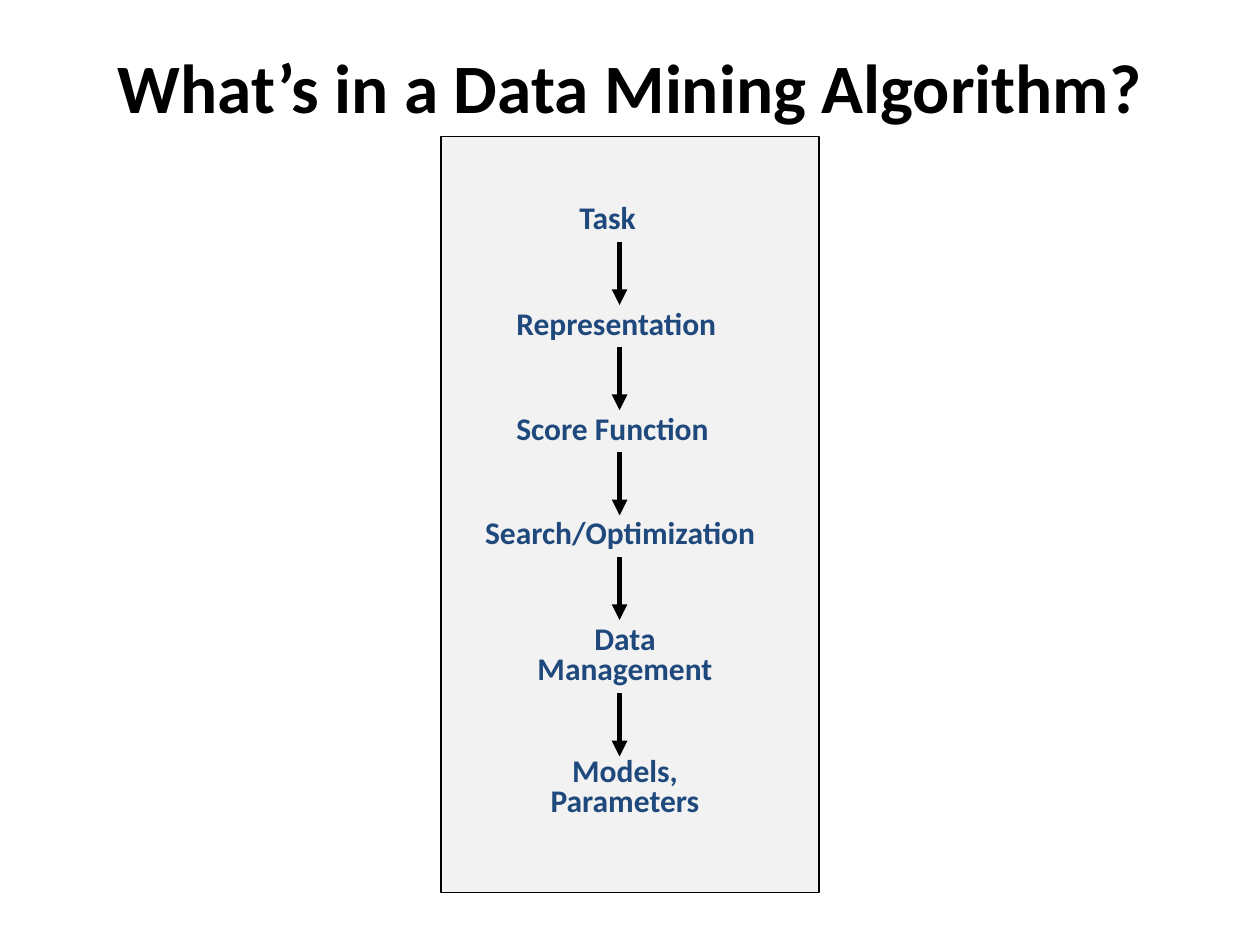
from dataclasses import dataclass

from lxml.etree import SubElement
from pptx import Presentation
from pptx.dml.color import RGBColor
from pptx.enum.shapes import MSO_CONNECTOR, MSO_SHAPE
from pptx.enum.text import MSO_ANCHOR, PP_ALIGN
from pptx.oxml.ns import qn
from pptx.util import Cm, Pt


@dataclass(frozen=True)
class Theme:
    """Colours, font and type sizes of the deck."""
    font: str = "Calibri"
    ink: RGBColor = RGBColor(0x00, 0x00, 0x00)
    label: RGBColor = RGBColor(0x1F, 0x49, 0x7D)
    panel: RGBColor = RGBColor(0xF2, 0xF2, 0xF2)
    title_size: float = 39.6
    label_size: float = 18


THEME = Theme()
ONE_LINE, TWO_LINES = 0.86, 1.5
ARROW_X, ARROW_LENGTH = 3.6, 1.27

STEPS = [
    ("Task", 2.54, 1.27, 2.97, ONE_LINE, PP_ALIGN.LEFT),
    ("Representation", 1.27, 3.39, 5.28, ONE_LINE, PP_ALIGN.LEFT),
    ("Score Function", 1.27, 5.51, 5.28, ONE_LINE, PP_ALIGN.LEFT),
    ("Search/Optimization", 0.64, 7.62, 7.2, ONE_LINE, PP_ALIGN.LEFT),
    ("Data Management", 1.07, 9.73, 5.28, TWO_LINES, PP_ALIGN.CENTER),
    ("Models, Parameters", 1.07, 12.4, 5.28, TWO_LINES, PP_ALIGN.CENTER),
]


def add_text(s, text, box, size, color, align, anchor, spacing=1.0):
    """Place one bold paragraph in a box given in centimetres."""
    tf = s.shapes.add_textbox(*map(Cm, box)).text_frame
    tf.word_wrap = True
    tf.vertical_anchor = anchor
    p = tf.paragraphs[0]
    p.text = text
    p.alignment = align
    p.line_spacing = spacing
    p.font.name = THEME.font
    p.font.size = Pt(size)
    p.font.bold = True
    p.font.color.rgb = color


def add_arrow(s, x, top, length):
    """Draw a downward arrow from the given point."""
    arrow = s.shapes.add_connector(
        MSO_CONNECTOR.STRAIGHT, Cm(x), Cm(top), Cm(x), Cm(top + length))
    arrow.line.color.rgb = THEME.ink
    arrow.line.width = Pt(3)
    SubElement(arrow.line._get_or_add_ln(), qn("a:tailEnd"), type="triangle")
    SubElement(arrow._element.spPr, qn("a:effectLst"))


def add_title(s, box):
    """Place the slide title."""
    add_text(s, "What’s in a Data Mining Algorithm?", box, THEME.title_size,
             THEME.ink, PP_ALIGN.CENTER, MSO_ANCHOR.TOP)


def add_flow(s, box):
    """Draw the panel with its steps and the arrows between them."""
    left, top = box[:2]
    panel = s.shapes.add_shape(MSO_SHAPE.RECTANGLE, *map(Cm, box))
    panel.shadow.inherit = False
    panel.fill.solid()
    panel.fill.fore_color.rgb = THEME.panel
    panel.line.color.rgb = THEME.ink
    panel.line.width = Pt(0.75)
    for text, x, y, width, height, align in STEPS:
        add_text(s, text, (left + x, top + y, width, height), THEME.label_size,
                 THEME.label, align, MSO_ANCHOR.MIDDLE, 0.8)
    for _, _, y, _, height, _ in STEPS[:-1]:
        add_arrow(s, left + ARROW_X, top + y + height, ARROW_LENGTH)


def main():
    """Build and save the slide."""
    prs = Presentation()
    prs.slide_width, prs.slide_height = Cm(25.4), Cm(19.05)
    s = prs.slides.add_slide(prs.slide_layouts[6])
    add_title(s, (1.27, 0.76, 22.86, 3.18))
    add_flow(s, (8.89, 2.75, 7.62, 15.24))
    prs.save("out.pptx")


if __name__ == "__main__":
    main()
